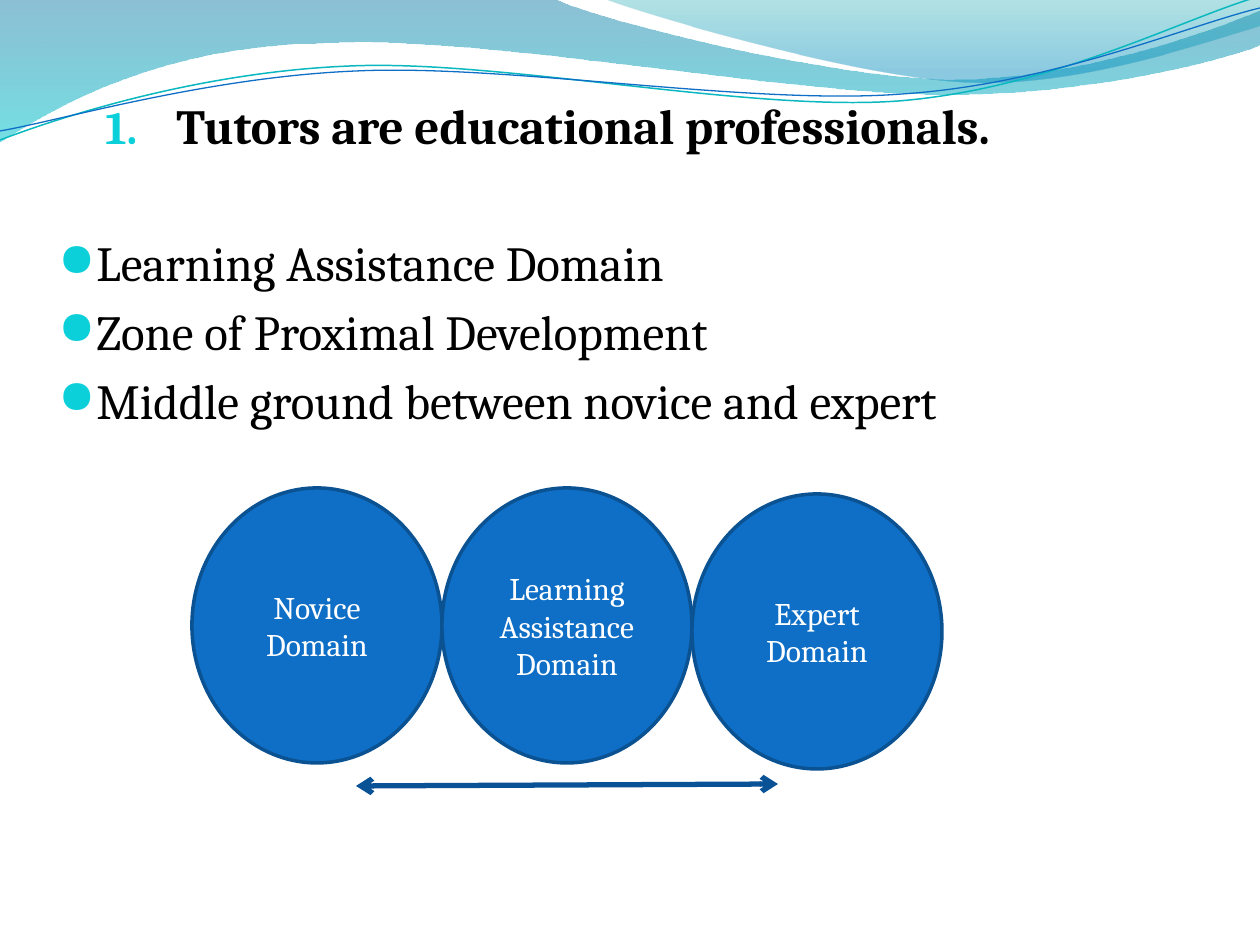
from lxml import etree
from pptx import Presentation
from pptx import util as u
from pptx.dml.color import RGBColor
from pptx.enum import shapes, text
from pptx.oxml.ns import qn

PX = 914400 / 126
FONT = "Cambria"
BLACK = RGBColor(0x00, 0x00, 0x00)
WHITE = RGBColor(0xFF, 0xFF, 0xFF)
BLUE = RGBColor(0x0F, 0x6F, 0xC6)
DARK_BLUE = RGBColor(0x0B, 0x52, 0x92)
ARROW_BLUE = RGBColor(0x09, 0x52, 0x95)
TEAL = RGBColor(0x0A, 0xB8, 0xBF)
BAND_TOP = RGBColor(0x00, 0x74, 0xA1)
BAND_BOTTOM = RGBColor(0x00, 0xC6, 0xCF)
SHEEN_TOP = RGBColor(0x00, 0xA1, 0xA9)
SHEEN_BOTTOM = RGBColor(0x00, 0x8B, 0xBF)
BULLET = RGBColor(0x0B, 0xD0, 0xD9)


def px(*lengths):
    return [u.Emu(round(length * PX)) for length in lengths]


def add_curve(start, segments, close):
    """Draw lines (x, y) and Bézier curves (x1, y1, x2, y2, x, y), in px."""
    points = [px(*segment[i:i + 2]) for segment in segments for i in range(0, len(segment), 2)]
    builder = slide.shapes.build_freeform(*px(*start), scale=1.0)
    builder.add_line_segments(points, close=close)
    shape = builder.convert_to_shape()
    shape.shadow.inherit = False
    # Turn each run of three points into one cubic curve
    steps = iter(list(shape._element.iter(qn("a:lnTo"))))
    for segment in segments:
        parts = [next(steps) for _ in range(len(segment) // 2)]
        if len(parts) == 3:
            curve = etree.Element(qn("a:cubicBezTo"))
            parts[0].addprevious(curve)
            for part in parts:
                curve.append(part[0])
                part.getparent().remove(part)
    return shape


presentation = Presentation()
presentation.slide_width, presentation.slide_height = px(1260, 945)
slide = presentation.slides.add_slide(presentation.slide_layouts[6])

# Translucent gradient bands along the top: stops are (position, colour, opacity %)
bands = [
    ((0, 0),
     [(554, -1), (600, 21, 837, 79, 955, 79), (1075, 79, 1207, 33, 1260, 11),
      (1261, 45), (1239, 55, 1096, 96, 940, 94), (784, 94, 481, 35, 324, 43),
      (163, 45, 58, 105, -1, 142), (0, 0)],
     [(0, BAND_TOP, 45), (1, BAND_BOTTOM, 55)]),
    ((604, -1),
     [(641, 14, 859, 78, 969, 82), (1079, 87, 1211, 40, 1260, 26), (1260, 0), (604, -1)],
     [(0, SHEEN_TOP, 30), (0.8, SHEEN_BOTTOM, 45)]),
]
for start, segments, stops in bands:
    band = add_curve(start, segments, close=True)
    band.line.fill.background()
    band.fill.gradient()
    band.fill.gradient_angle = 270
    for stop, (position, color, opacity) in zip(band.fill.gradient_stops, stops):
        stop.position = position
        stop.color.rgb = color
    for element, (position, color, opacity) in zip(band.element.iter(qn("a:srgbClr")), stops):
        etree.SubElement(element, qn("a:alpha"), val=str(opacity * 1000))

# Thin waves
waves = [
    ((0, 140), [(60, 117, 199, 72, 349, 66), (498, 59, 747, 112, 898, 101),
                (1050, 89, 1182, 19, 1257, -3)], TEAL, 0.85),
    ((0, 131), [(59, 121, 207, 77, 357, 71), (508, 64, 752, 106, 903, 94),
                (1053, 84, 1186, 26, 1260, 8)], BLUE, 0.75),
]
for start, segments, color, width in waves:
    wave = add_curve(start, segments, close=False)
    wave.fill.background()
    wave.line.color.rgb = color
    wave.line.width = u.Pt(width)

# Numbered heading and bullets: text, indent px, hanging px, space before pt
lines = [
    ("Tutors are educational professionals.", 118, 71, 5.6),
    ("Learning Assistance Domain", 38, 38, 45),
    ("Zone of Proximal Development", 38, 38, 5.6),
    ("Middle ground between novice and expert", 38, 38, 5.6),
]
body = slide.shapes.add_textbox(*px(46, 89, 1134, 764)).text_frame
body.word_wrap = True
for index, (words, indent, hanging, space) in enumerate(lines):
    heading = index == 0
    paragraph = body.paragraphs[0] if heading else body.add_paragraph()
    paragraph.text = words
    paragraph.space_before = u.Pt(space)
    paragraph.font.name = FONT
    paragraph.font.size = u.Pt(28)
    paragraph.font.bold = heading
    paragraph.font.color.rgb = BLACK
    properties = paragraph._p.get_or_add_pPr()
    properties.set("marL", str(px(indent)[0]))
    properties.set("indent", str(px(-hanging)[0]))
    marks = [etree.Element(qn("a:buClr")), etree.Element(qn("a:buSzPct"), val="95000"),
             etree.Element(qn("a:buFont"), typeface=FONT if heading else "OpenSymbol")]
    etree.SubElement(marks[0], qn("a:srgbClr"), val=str(BULLET))
    if heading:
        marks.append(etree.Element(qn("a:buAutoNum"), type="arabicPeriod"))
    else:
        marks.append(etree.Element(qn("a:buChar"), char="●"))
    default_run = properties.find(qn("a:defRPr"))
    for mark in marks:
        default_run.addprevious(mark)

# Three touching domains
domains = [("Novice Domain", 488), ("Learning Assistance Domain", 488), ("Expert Domain", 494)]
for index, (words, top) in enumerate(domains):
    domain = slide.shapes.add_shape(shapes.MSO_SHAPE.OVAL, *px(192 + 250 * index, top, 250, 275))
    domain.shadow.inherit = False
    domain.fill.solid()
    domain.fill.fore_color.rgb = BLUE
    domain.line.color.rgb = DARK_BLUE
    domain.line.width = u.Pt(2)
    frame = domain.text_frame
    frame.word_wrap = True
    frame.vertical_anchor = text.MSO_ANCHOR.MIDDLE
    paragraph = frame.paragraphs[0]
    paragraph.text = words
    paragraph.alignment = text.PP_ALIGN.CENTER
    paragraph.font.name = FONT
    paragraph.font.size = u.Pt(18)
    paragraph.font.color.rgb = WHITE

# Double arrow between novice and expert
arrow = slide.shapes.add_connector(shapes.MSO_CONNECTOR.STRAIGHT, *px(356, 786, 778, 784))
arrow.line.color.rgb = ARROW_BLUE
arrow.line.width = u.Pt(3)
line = arrow.line._get_or_add_ln()
for end in ("a:headEnd", "a:tailEnd"):
    etree.SubElement(line, qn(end), type="arrow")
etree.SubElement(arrow._element.spPr, qn("a:effectLst"))

presentation.save("out.pptx")
